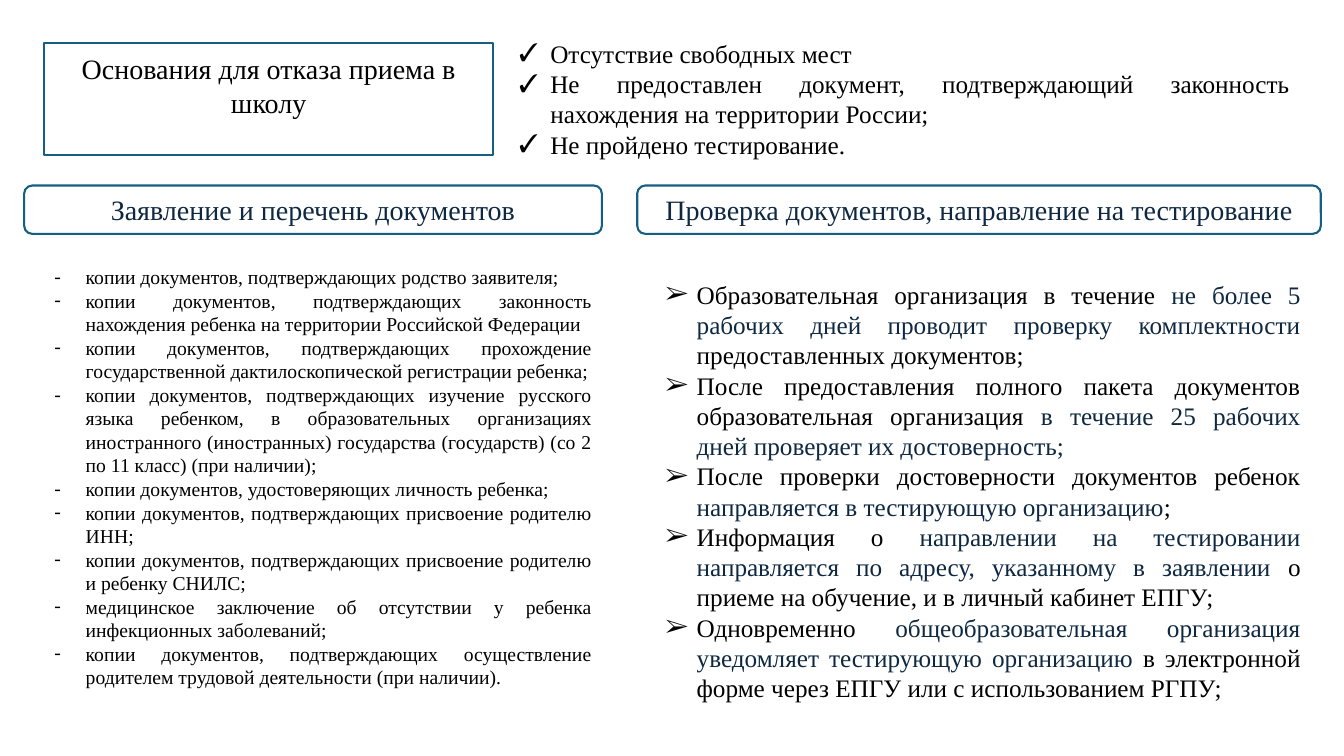
from lxml import etree
from pptx import Presentation
from pptx.dml.color import RGBColor
from pptx.enum.shapes import MSO_SHAPE
from pptx.enum.text import MSO_ANCHOR, MSO_AUTO_SIZE, PP_ALIGN
from pptx.oxml.ns import qn
from pptx.util import Pt

PX = 9144
FONT = "Times New Roman"
BLACK, NAVY, TEAL, WHITE = "000000", "0E2841", "156082", "FFFFFF"
CENTER, JUSTIFY = PP_ALIGN.CENTER, PP_ALIGN.JUSTIFY
TOP, MIDDLE = MSO_ANCHOR.TOP, MSO_ANCHOR.MIDDLE
NO_FIT = MSO_AUTO_SIZE.NONE
ROUND_RECT = MSO_SHAPE.ROUNDED_RECTANGLE
TWO_CONTENT = 3
INDENT = 31

TITLE = "Основания для отказа приема в школу"
REASONS = [
    ["Отсутствие свободных мест"],
    ["Не предоставлен документ, подтверждающий законность нахождения на территории России;"],
    ["Не пройдено тестирование."],
]
DOCUMENTS = [
    ["копии документов, подтверждающих родство заявителя;"],
    ["копии документов, подтверждающих законность нахождения ребенка на территории "
     "Российской Федерации"],
    ["копии документов, подтверждающих прохождение государственной дактилоскопической "
     "регистрации ребенка;"],
    ["копии документов, подтверждающих изучение русского языка ребенком, в образовательных "
     "организациях иностранного (иностранных) государства (государств) (со 2 по 11 класс) "
     "(при наличии);"],
    ["копии документов, удостоверяющих личность ребенка;"],
    ["копии документов, подтверждающих присвоение родителю ИНН;"],
    ["копии документов, подтверждающих присвоение родителю и ребенку СНИЛС;"],
    ["медицинское заключение об отсутствии у ребенка инфекционных заболеваний;"],
    ["копии документов, подтверждающих осуществление родителем трудовой деятельности "
     "(при наличии)."],
]
CHECKS = [
    ["Образовательная организация в течение ",
     "не более 5 рабочих дней проводит проверку комплектности ",
     "предоставленных документов;"],
    ["После предоставления полного пакета документов образовательная организация ",
     "в течение 25 рабочих дней проверяет их достоверность;"],
    ["После проверки достоверности документов ребенок ",
     "направляется в тестирующую организацию", ";"],
    ["Информация о ",
     "направлении на тестировании направляется по адресу, указанному в заявлении ",
     "о приеме на обучение, и в личный кабинет ЕПГУ;"],
    ["Одновременно ",
     "общеобразовательная организация уведомляет тестирующую организацию ",
     "в электронной форме через ЕПГУ или с использованием РГПУ;"],
]


def rgb(value):
    """Turn a hex string into a colour."""
    return RGBColor.from_string(value)


def emu(box):
    """Turn a box in px into EMU."""
    return [v * PX for v in box]


def place(sp, box):
    """Move and size a shape to a box in px."""
    sp.left, sp.top, sp.width, sp.height = emu(box)


def outline(sp):
    """Give a shape the white fill and teal frame."""
    sp.fill.solid()
    sp.fill.fore_color.rgb = rgb(WHITE)
    sp.line.color.rgb = rgb(TEAL)
    sp.line.width = Pt(1.5)


def frame(sp, anchor=TOP):
    """Set up the text frame of a shape and return it."""
    tf = sp.text_frame
    tf.word_wrap = True
    tf.auto_size = NO_FIT
    tf.vertical_anchor = anchor
    return tf


def add_run(p, text, size=20, color=BLACK):
    """Add a formatted run to a paragraph."""
    r = p.add_run()
    r.text = text
    r.font.name = FONT
    r.font.size = Pt(size)
    r.font.color.rgb = rgb(color)


def add_bullet(p, char):
    """Give a paragraph a hanging bullet."""
    pPr = p._p.get_or_add_pPr()
    pPr.set("marL", str(INDENT * PX))
    pPr.set("indent", str(-INDENT * PX))
    etree.SubElement(pPr, qn("a:buFont")).set("typeface", FONT)
    etree.SubElement(pPr, qn("a:buChar")).set("char", char)


def fill_title(sp, box):
    """Place the framed slide title."""
    place(sp, box)
    outline(sp)
    tf = frame(sp)
    tf.margin_top = 8 * PX
    p = tf.paragraphs[0]
    p.alignment = CENTER
    add_run(p, TITLE)


def fill_list(sp, box, items, char, size):
    """Place a justified list whose runs alternate between black and navy."""
    place(sp, box)
    tf = frame(sp)
    for i, item in enumerate(items):
        p = tf.add_paragraph() if i else tf.paragraphs[0]
        p.alignment = JUSTIFY
        p.space_before = Pt(0)
        add_bullet(p, char)
        for j, text in enumerate(item):
            add_run(p, text, size=size, color=NAVY if j % 2 else BLACK)


def add_heading(s, box, text):
    """Add a rounded column heading."""
    sp = s.shapes.add_shape(ROUND_RECT, *emu(box))
    sp.shadow.inherit = False
    outline(sp)
    p = frame(sp, MIDDLE).paragraphs[0]
    p.alignment = CENTER
    add_run(p, text, color=NAVY)


def build_slide(prs):
    """Build the slide on refusal grounds and document checks."""
    s = prs.slides.add_slide(prs.slide_layouts[TWO_CONTENT])
    fill_title(s.shapes.title, (44, 43, 445, 111))
    reasons_box = (505, 33, 784, 131)
    reasons = s.shapes.add_textbox(*emu(reasons_box))
    fill_list(reasons, reasons_box, REASONS, "✓", 18)
    add_heading(s, (24, 184, 573, 48), "Заявление и перечень документов")
    add_heading(s, (632, 184, 678, 48), "Проверка документов, направление на тестирование")
    fill_list(s.placeholders[1], (44, 258, 553, 434), DOCUMENTS, "-", 14)
    fill_list(s.placeholders[2], (650, 272, 650, 464), CHECKS, "➢", 18)


def main():
    """Create and save the presentation."""
    prs = Presentation()
    prs.slide_width, prs.slide_height = emu((1333, 750))
    build_slide(prs)
    prs.save("out.pptx")


if __name__ == "__main__":
    main()
